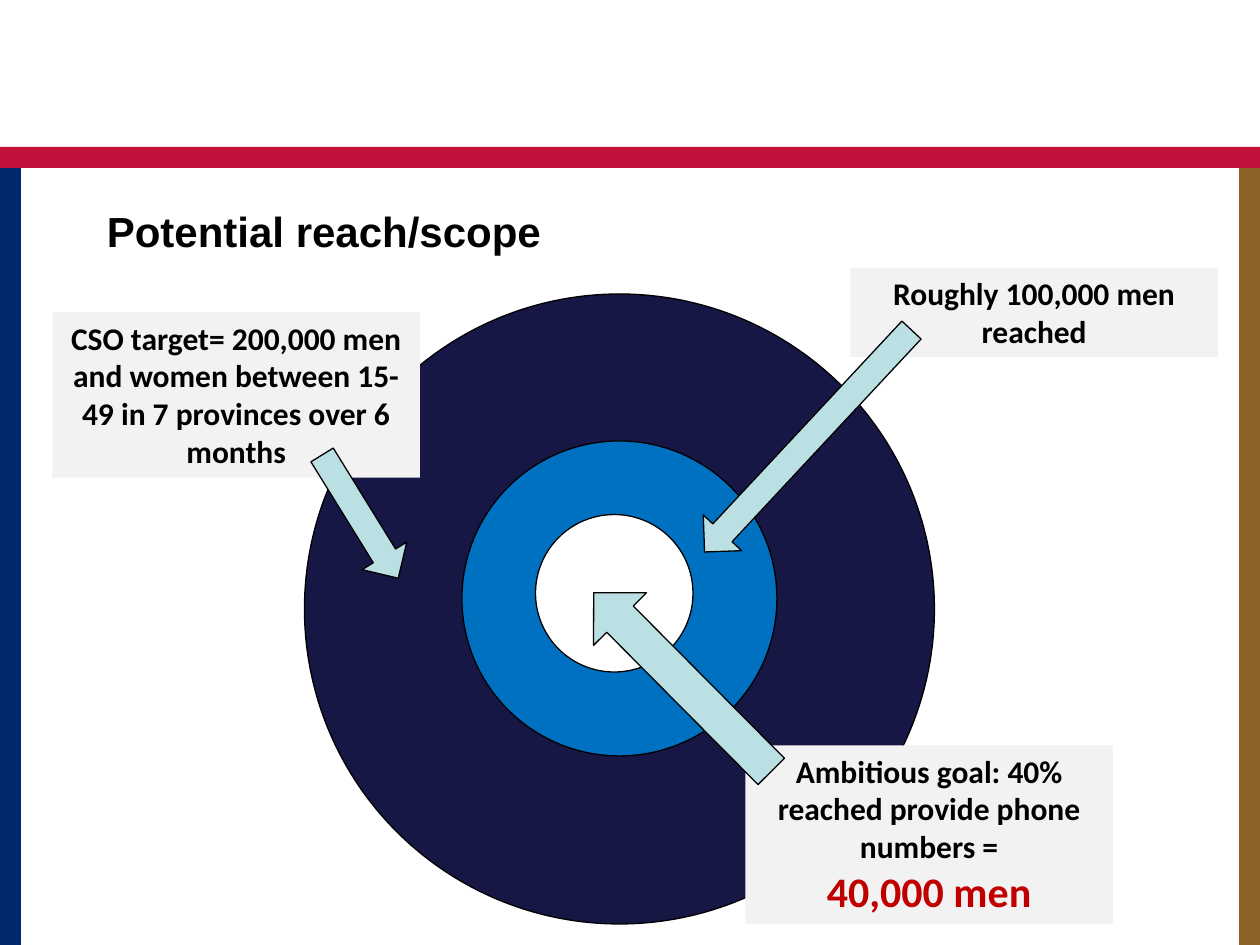
from dataclasses import dataclass
from typing import NamedTuple

from pptx import Presentation
from pptx.dml.color import RGBColor
from pptx.enum.shapes import MSO_SHAPE
from pptx.enum.text import MSO_ANCHOR, MSO_AUTO_SIZE, PP_ALIGN
from pptx.util import Inches, Pt

COLUMNS, ROWS = 120, 90


class Box(NamedTuple):
    left: float
    top: float
    width: float
    height: float

    def inner(self, left, top, width, height):
        return Box(self.left + left, self.top + top, width, height)

    def lengths(self):
        return [Inches(10 * units / COLUMNS) for units in self]


@dataclass(frozen=True)
class Theme:
    red: str = "C2113A"
    blue: str = "002A6C"
    brown: str = "8C6428"
    ink: str = "000000"
    label: str = "F2F2F2"
    accent: str = "C00000"
    arrow: str = "BBE0E3"
    rings: tuple = ("171745", "0070C0", "FFFFFF")
    title_font: str = "Arial"
    label_font: str = "Calibri"
    large: int = 24
    normal: int = 18
    outline: float = 0.75


THEME = Theme()


def set_values(target, values):
    for name, value in values.items():
        setattr(target, name, value)


def add_shape(page, kind, box, fill, outlined=False, rotation=0):
    shape = page.shapes.add_shape(kind, *box.lengths())
    set_values(shape, {"rotation": rotation})
    shape.shadow.inherit = False
    shape.fill.solid()
    shape.fill.fore_color.rgb = RGBColor.from_string(fill)
    if outlined:
        shape.line.color.rgb = RGBColor.from_string(THEME.ink)
        shape.line.width = Pt(THEME.outline)
    else:
        shape.line.fill.background()
    return shape


def write_text(shape, lines, font, align):
    frame = shape.text_frame
    set_values(frame, {
        "word_wrap": True,
        "auto_size": MSO_AUTO_SIZE.NONE,
        "vertical_anchor": MSO_ANCHOR.TOP,
    })
    for index, (text, size, color) in enumerate(lines):
        para = frame.add_paragraph() if index else frame.paragraphs[0]
        para.alignment = align
        span = para.add_run()
        span.text = text
        set_values(span.font, {"name": font, "size": Pt(size), "bold": True})
        span.font.color.rgb = RGBColor.from_string(color)


def draw_frame(page, box, band=2):
    bars = (
        (box.inner(0, 0, box.width, band), THEME.red),
        (box.inner(0, band, band, box.height - band), THEME.blue),
        (box.inner(box.width - band, band, band, box.height - band), THEME.brown),
    )
    for bar, color in bars:
        add_shape(page, MSO_SHAPE.RECTANGLE, bar, color)


def draw_title(page, box, text):
    title = page.shapes.add_textbox(*box.lengths())
    write_text(title, [(text, THEME.large, THEME.ink)], THEME.title_font, PP_ALIGN.LEFT)


def draw_rings(page, box):
    rings = (
        box,
        box.inner(15, 14, box.width / 2, box.height / 2),
        box.inner(22, 21, box.width / 4, box.height / 4),
    )
    for ring, color in zip(rings, THEME.rings):
        add_shape(page, MSO_SHAPE.OVAL, ring, color, outlined=True)


def draw_label(page, box, text, highlight=None):
    label = add_shape(page, MSO_SHAPE.RECTANGLE, box, THEME.label)
    lines = [(text, THEME.normal, THEME.ink)]
    if highlight:
        lines.append((highlight, THEME.large, THEME.accent))
    write_text(label, lines, THEME.label_font, PP_ALIGN.CENTER)


def draw_arrow(page, box, rotation):
    add_shape(page, MSO_SHAPE.RIGHT_ARROW, box, THEME.arrow, True, rotation)


def main():
    deck = Presentation()
    set_values(deck, {"slide_width": Inches(10), "slide_height": Inches(7.5)})
    page = deck.slides.add_slide(deck.slide_layouts[6])

    draw_frame(page, Box(0, 14, COLUMNS, ROWS - 14))
    draw_title(page, Box(9, 19, 102, 8), "Potential reach/scope")
    draw_rings(page, Box(29, 28, 60, 60))

    labels = (
        (Box(5, 29.75, 35, 15.75),
         "CSO target= 200,000 men and women between 15-49 in 7 provinces over 6 months"),
        (Box(81, 25.5, 35, 8.5), "Roughly 100,000 men reached"),
        (Box(71, 71, 35, 17),
         "Ambitious goal: 40% reached provide phone numbers =", "40,000 men"),
    )
    for label in labels:
        draw_label(page, *label)

    arrows = (
        (Box(27.4, 46.7, 13.8, 5), 58.3),
        (Box(62.5, 39.5, 28.9, 5), 133),
        (Box(53, 61.4, 24, 7.1), 225.2),
    )
    for arrow in arrows:
        draw_arrow(page, *arrow)

    deck.save("out.pptx")


if __name__ == "__main__":
    main()
